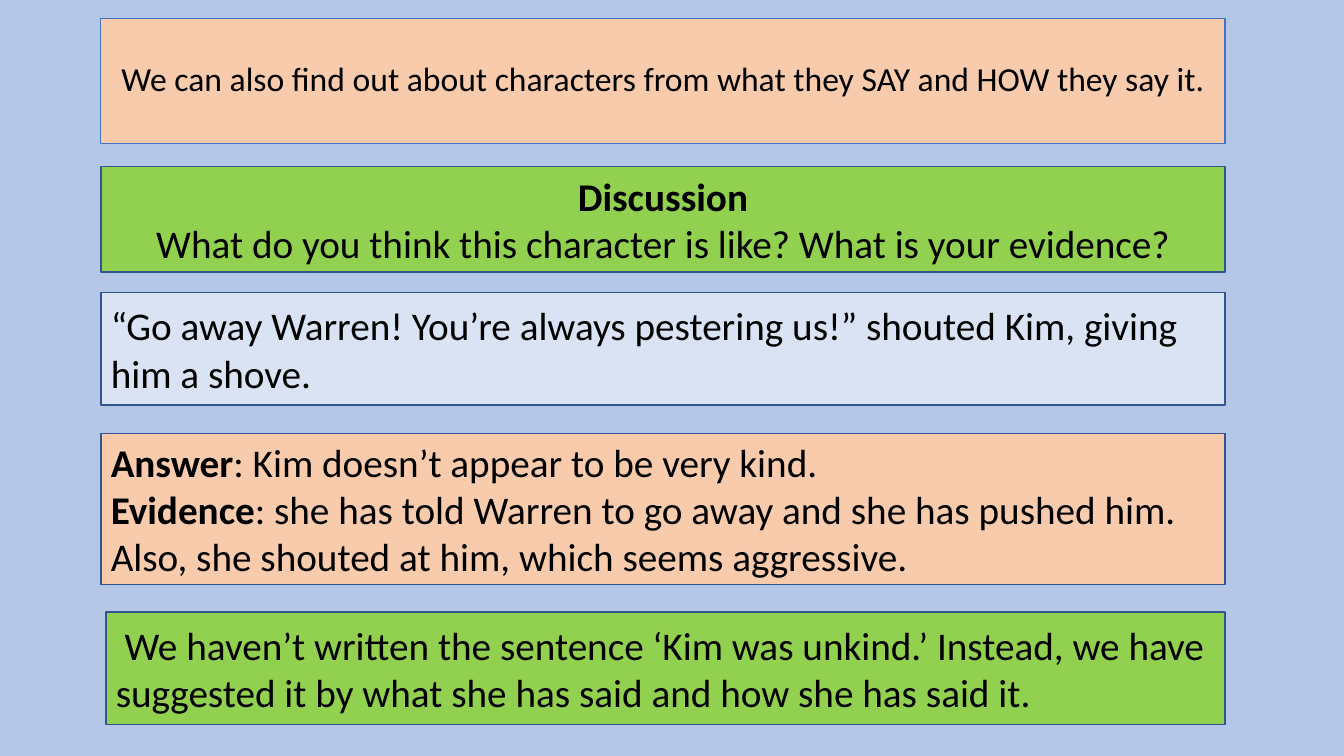
from pptx import Presentation
from pptx.dml.color import RGBColor
from pptx.enum.shapes import MSO_SHAPE as SHAPE
from pptx.enum.text import MSO_ANCHOR as ANCHOR, PP_ALIGN as ALIGN
from pptx.util import Pt

PX = 9144
SKY = RGBColor(0xB4, 0xC7, 0xE7)
PEACH = RGBColor(0xF8, 0xCB, 0xAD)
GREEN = RGBColor(0x92, 0xD0, 0x50)
PALE = RGBColor(0xDA, 0xE3, 0xF3)
BLUE = RGBColor(0x44, 0x72, 0xC4)
NAVY = RGBColor(0x32, 0x54, 0x91)
BLACK = RGBColor(0, 0, 0)

RIGHT = 1215
TITLE = [[("We can also find out about characters from what they SAY and HOW they say it.", False)]]
DISCUSSION = [
    [("Discussion", True)],
    [("What do you think this character is like? What is your evidence?", False)],
]
QUOTE = [[("“Go away Warren! You’re always pestering us!” shouted Kim, giving him a shove.", False)]]
ANSWER = [
    [("Answer", True), (": Kim doesn’t appear to be very kind.", False)],
    [("Evidence", True),
     (": she has told Warren to go away and she has pushed him. "
      "Also, she shouted at him, which seems aggressive.", False)],
]
SUMMARY = [[(" We haven’t written the sentence ‘Kim was unkind.’ Instead, we have "
             "suggested it by what she has said and how she has said it.", False)]]

BOXES = [
    (100, 18, 124, PEACH, BLUE, 0.75, 24, ALIGN.CENTER, 0.9, TITLE),
    (100, 165, 105, GREEN, NAVY, 1, 28, ALIGN.CENTER, 1.0, DISCUSSION),
    (100, 290, 112, PALE, NAVY, 1, 28, ALIGN.LEFT, 1.0, QUOTE),
    (100, 430, 150, PEACH, NAVY, 1, 28, ALIGN.LEFT, 1.0, ANSWER),
    (105, 607, 112, GREEN, NAVY, 1, 28, ALIGN.LEFT, 1.0, SUMMARY),
]

prs = Presentation()
prs.slide_width = 1333 * PX
prs.slide_height = 750 * PX
s = prs.slides.add_slide(prs.slide_layouts[6])
s.background.fill.solid()
s.background.fill.fore_color.rgb = SKY

for left, top, height, fill, line, weight, size, align, spacing, paragraphs in BOXES:
    sp = s.shapes.add_shape(SHAPE.RECTANGLE, left * PX, top * PX, (RIGHT - left) * PX, height * PX)
    sp.shadow.inherit = False
    sp.fill.solid()
    sp.fill.fore_color.rgb = fill
    sp.line.color.rgb = line
    sp.line.width = Pt(weight)
    tf = sp.text_frame
    tf.word_wrap = True
    tf.vertical_anchor = ANCHOR.MIDDLE
    for i, runs in enumerate(paragraphs):
        p = tf.add_paragraph() if i else tf.paragraphs[0]
        p.alignment = align
        p.line_spacing = spacing
        p.font.name = "Calibri"
        p.font.size = Pt(size)
        p.font.color.rgb = BLACK
        for text, bold in runs:
            r = p.add_run()
            r.text = text
            r.font.bold = bold

prs.save("out.pptx")
